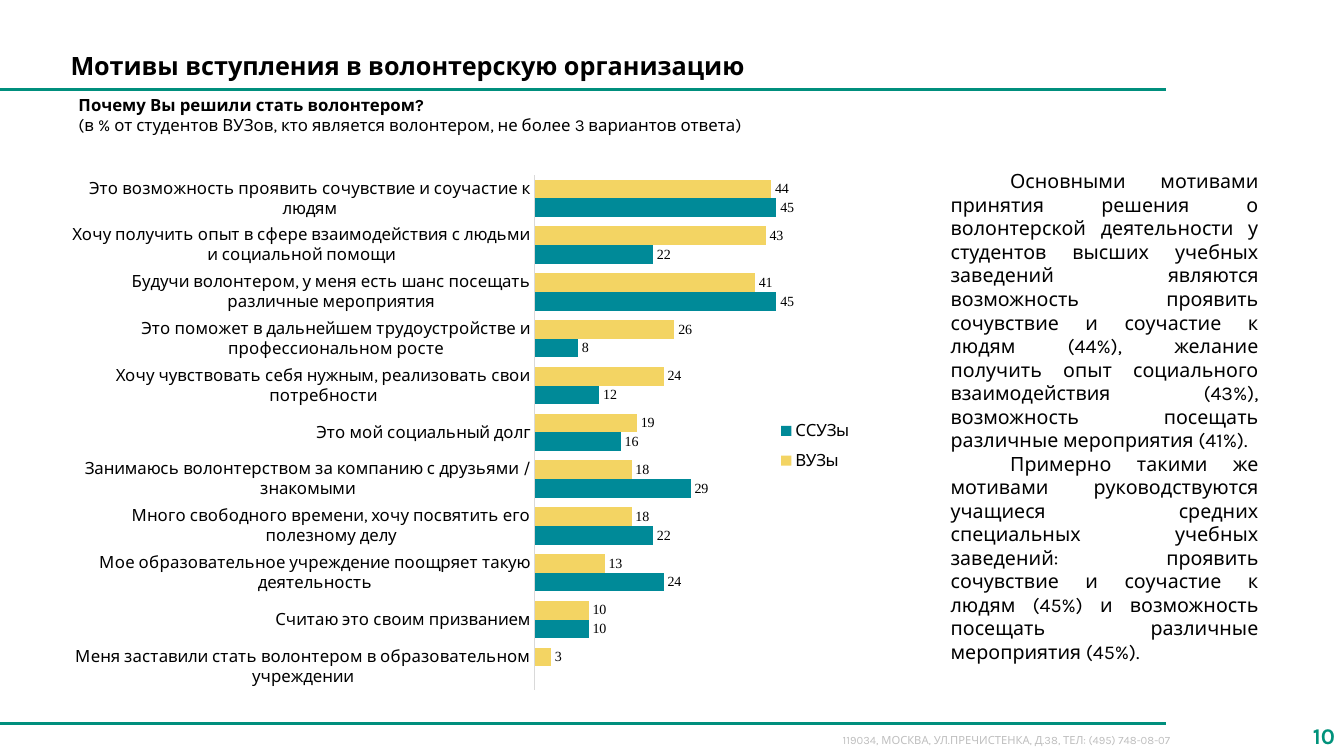
"""Build the slide on motives for joining a volunteer organisation."""
from dataclasses import dataclass
from typing import Optional

from lxml.etree import SubElement
from pptx import Presentation
from pptx.chart.data import CategoryChartData
from pptx.dml.color import RGBColor
from pptx.enum.chart import XL_CHART_TYPE as ChartType
from pptx.enum.chart import XL_LABEL_POSITION as LabelPosition
from pptx.enum.chart import XL_LEGEND_POSITION as LegendPosition
from pptx.enum.chart import XL_TICK_MARK as TickMark
from pptx.enum.shapes import MSO_CONNECTOR as Connector
from pptx.enum.text import MSO_ANCHOR as Anchor
from pptx.enum.text import MSO_AUTO_SIZE as AutoSize
from pptx.enum.text import PP_ALIGN as Align
from pptx.oxml.ns import qn
from pptx.util import Inches, Pt

BLACK = RGBColor(0x00, 0x00, 0x00)
GREEN = RGBColor(0x00, 0x8F, 0x7D)
PAGE_GREEN = RGBColor(0x00, 0x92, 0x7B)
GREY = RGBColor(0xBF, 0xBF, 0xBF)
AXIS_GREY = RGBColor(0xD9, 0xD9, 0xD9)
YELLOW = RGBColor(0xF3, 0xD4, 0x63)
TEAL = RGBColor(0x00, 0x8A, 0x98)
TEXT_FONT = "Karla"
VALUE_FONT = "Times New Roman"
WHOLE = "#,##0"


@dataclass(frozen=True)
class Box:
    left: float
    top: float
    width: float
    height: float

    def lengths(self) -> tuple:
        return tuple(Inches(v) for v in (self.left, self.top, self.width, self.height))


@dataclass(frozen=True)
class Motive:
    answer: str
    universities: int
    colleges: Optional[int]


@dataclass(frozen=True)
class Group:
    name: str
    field: str
    color: RGBColor


MOTIVES = [
    Motive("Это возможность проявить сочувствие и соучастие к людям", 44, 45),
    Motive("Хочу получить опыт в сфере взаимодействия с людьми и социальной помощи", 43, 22),
    Motive("Будучи волонтером, у меня есть шанс посещать различные мероприятия", 41, 45),
    Motive("Это поможет в дальнейшем трудоустройстве и профессиональном росте", 26, 8),
    Motive("Хочу чувствовать себя нужным, реализовать свои потребности", 24, 12),
    Motive("Это мой социальный долг", 19, 16),
    Motive("Занимаюсь волонтерством за компанию с друзьями / знакомыми", 18, 29),
    Motive("Много свободного времени, хочу посвятить его полезному делу", 18, 22),
    Motive("Мое образовательное учреждение поощряет такую деятельность", 13, 24),
    Motive("Считаю это своим призванием", 10, 10),
    Motive("Меня заставили стать волонтером в образовательном учреждении", 3, None),
]
GROUPS = [Group("ВУЗы", "universities", YELLOW), Group("ССУЗы", "colleges", TEAL)]
CONCLUSIONS = [
    "Основными мотивами принятия решения о волонтерской деятельности у студентов "
    "высших учебных заведений являются возможность проявить сочувствие и соучастие "
    "к людям (44%), желание получить опыт социального взаимодействия (43%), "
    "возможность посещать различные мероприятия (41%).",
    "Примерно такими же мотивами руководствуются учащиеся средних специальных "
    "учебных заведений: проявить сочувствие и соучастие к людям (45%) и возможность "
    "посещать различные мероприятия (45%).",
]


def set_font(font, size: float, color: RGBColor = BLACK, name: str = TEXT_FONT,
             bold: bool = False) -> None:
    font.size, font.name, font.bold = Pt(size), name, bold
    font.color.rgb = color


def write(shape, lines: list[str], *, size: float, color: RGBColor = BLACK,
          bold_lines: int = 0, align: Align = Align.LEFT,
          anchor: Anchor = Anchor.TOP, indent: float = 0) -> None:
    frame = shape.text_frame
    frame.word_wrap = True
    frame.auto_size = AutoSize.NONE
    frame.vertical_anchor = anchor
    for number, line in enumerate(lines):
        paragraph = frame.add_paragraph() if number else frame.paragraphs[0]
        paragraph.alignment = align
        if indent:
            properties = paragraph._p.get_or_add_pPr()
            properties.set("marL", "0")
            properties.set("indent", str(Inches(indent)))
        run = paragraph.add_run()
        run.text = line
        set_font(run.font, size, color, bold=number < bold_lines)


def add_text(slide, box: Box, lines: list[str], **text_format) -> None:
    write(slide.shapes.add_textbox(*box.lengths()), lines, **text_format)


def add_rule(slide, top: float) -> None:
    rule = slide.shapes.add_connector(
        Connector.STRAIGHT, 0, Inches(top), Inches(11.56), Inches(top))
    rule.line.color.rgb = GREEN
    rule.line.width = Pt(2)
    SubElement(rule._element.spPr, qn("a:effectLst"))


def place(part, index: int, box: Box, inner: bool = False) -> None:
    for old in part.findall(qn("c:layout")):
        part.remove(old)
    layout = SubElement(part, qn("c:layout"))
    part.insert(index, layout)
    manual = SubElement(layout, qn("c:manualLayout"))
    settings = [("layoutTarget", "inner")] if inner else []
    settings += [("xMode", "edge"), ("yMode", "edge"), ("x", box.left),
                 ("y", box.top), ("w", box.width), ("h", box.height)]
    for tag, value in settings:
        SubElement(manual, qn(f"c:{tag}")).set("val", str(value))


def add_motives_chart(slide, box: Box) -> None:
    data = CategoryChartData(number_format=WHOLE)
    data.categories = [motive.answer for motive in MOTIVES]
    for group in GROUPS:
        data.add_series(group.name, [getattr(motive, group.field) for motive in MOTIVES])
    chart = slide.shapes.add_chart(ChartType.BAR_CLUSTERED, *box.lengths(), data).chart
    chart.has_title = False
    set_font(chart.font, 10, name=VALUE_FONT)

    answers = chart.category_axis
    answers.reverse_order = True
    answers.major_tick_mark = answers.minor_tick_mark = TickMark.NONE
    answers.format.line.color.rgb = AXIS_GREY
    answers.format.line.width = Pt(0.75)
    set_font(answers.tick_labels.font, 12)

    shares = chart.value_axis
    shares.visible = shares.has_major_gridlines = False
    shares.minimum_scale, shares.maximum_scale = 0, 50
    shares.tick_labels.number_format = WHOLE
    shares.tick_labels.number_format_is_linked = False

    plot = chart.plots[0]
    plot.gap_width, plot.overlap = 50, 0
    plot.vary_by_categories = False
    for series, group in zip(plot.series, GROUPS):
        series.format.fill.solid()
        series.format.fill.fore_color.rgb = group.color
        labels = series.data_labels
        labels.show_value = True
        labels.number_format = WHOLE
        labels.number_format_is_linked = False
        labels.position = LabelPosition.OUTSIDE_END
        set_font(labels.font, 10, name=VALUE_FONT)

    chart.has_legend = True
    chart.legend.position = LegendPosition.RIGHT
    chart.legend.include_in_layout = False
    set_font(chart.legend.font, 12)
    place(chart.legend._element, 1, Box(0.83, 0.46, 0.12, 0.13))
    place(chart._chartSpace.chart.plotArea, 0, Box(0.556, 0.02, 0.32, 0.96), inner=True)


def main() -> None:
    deck = Presentation()
    deck.slide_width, deck.slide_height = Inches(13.33), Inches(7.5)
    slide = deck.slides.add_slide(deck.slide_layouts[5])

    for top in (7.18, 0.89):
        add_rule(slide, top)
    add_text(slide, Box(8.26, 7.23, 3.84, 0.24),
             ["119034, МОСКВА, УЛ.ПРЕЧИСТЕНКА, Д.38, ТЕЛ: (495) 748-08-07"],
             size=8, color=GREY)
    add_text(slide, Box(12.65, 7.1, 0.69, 0.4), ["10"], size=16, color=PAGE_GREEN,
             bold_lines=1, align=Align.RIGHT, anchor=Anchor.MIDDLE)

    title = slide.shapes.title
    title.left, title.top, title.width, title.height = Box(0.6, 0.45, 11.35, 0.4).lengths()
    write(title, ["Мотивы вступления в волонтерскую организацию"], size=18,
          bold_lines=1, anchor=Anchor.MIDDLE)
    add_text(slide, Box(9.33, 1.63, 3.25, 4.11), CONCLUSIONS, size=14,
             align=Align.JUSTIFY, indent=0.59)
    add_text(slide, Box(0.68, 0.89, 10.72, 0.5),
             ["Почему Вы решили стать волонтером?",
              "(в % от студентов ВУЗов, кто является волонтером, не более 3 вариантов ответа)"],
             size=12, bold_lines=1)
    add_motives_chart(slide, Box(0.68, 1.63, 8.32, 5.32))
    deck.save("out.pptx")


if __name__ == "__main__":
    main()
